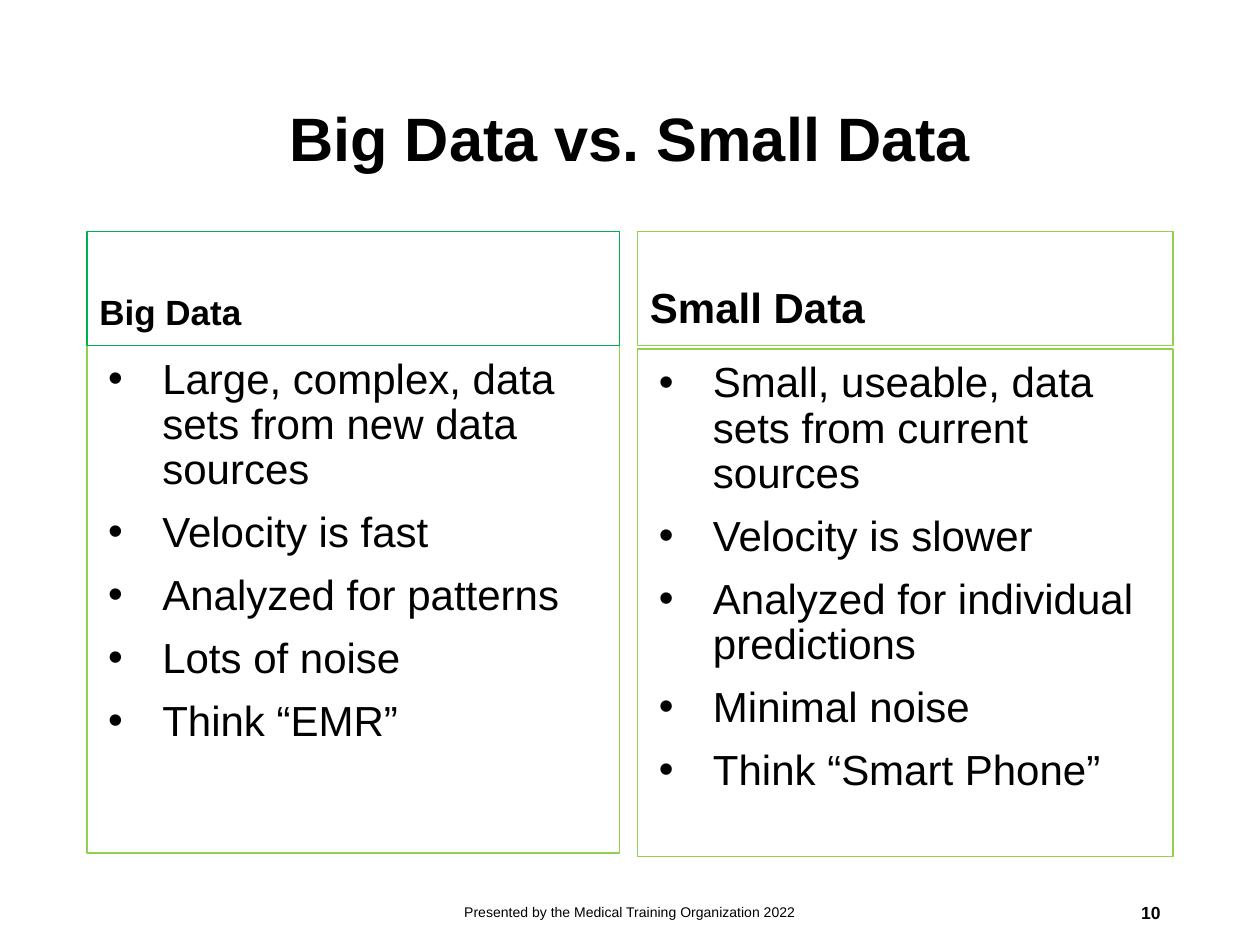
from lxml import etree
from pptx import Presentation
from pptx.dml.color import RGBColor
from pptx.enum.shapes import MSO_SHAPE
from pptx.enum.text import MSO_ANCHOR as ANCHOR, MSO_AUTO_SIZE as FIT, PP_ALIGN as ALIGN
from pptx.oxml.ns import qn
from pptx.util import Inches, Pt

INK = "000000"
COLUMNS = [
    dict(heading="Big Data", size=20, line="00B050", left=0.69, width=4.23, body_top=2.74,
         points=["Large, complex, data sets from new data sources", "Velocity is fast",
                 "Analyzed for patterns", "Lots of noise", "Think “EMR”"]),
    dict(heading="Small Data", size=24, line="92D050", left=5.06, width=4.25, body_top=2.77,
         points=["Small, useable, data sets from current sources", "Velocity is slower",
                 "Analyzed for individual predictions", "Minimal noise",
                 "Think “Smart Phone”"]),
]


def rgb(value):
    """Return the colour for a hex string."""
    return RGBColor.from_string(value)


def set_all(target, values):
    """Set attributes of an object from a dict."""
    for name, value in values.items():
        setattr(target, name, value)


def add_bullet(p):
    """Give a paragraph a hanging round bullet."""
    pPr = p._p.get_or_add_pPr()
    indents = {"marL": Inches(0.5), "indent": Inches(-0.43)}
    for name, value in indents.items():
        pPr.set(name, str(int(value)))
    etree.SubElement(pPr, qn("a:buFont")).set("typeface", "Arial")
    etree.SubElement(pPr, qn("a:buChar")).set("char", "•")


def write(s, lines, size, bold=False, align=ALIGN.LEFT, anchor=ANCHOR.MIDDLE,
          spacing=0.9, bullets=False, inset=0.1):
    """Fill a shape with formatted paragraphs."""
    tf = s.text_frame
    set_all(tf, dict(word_wrap=True, auto_size=FIT.NONE, vertical_anchor=anchor,
                     margin_left=Inches(0.1), margin_right=Inches(0.1),
                     margin_top=Inches(inset), margin_bottom=Inches(inset)))
    for i, line in enumerate(lines):
        p = tf.paragraphs[0] if i == 0 else tf.add_paragraph()
        set_all(p, dict(alignment=align, line_spacing=spacing,
                        space_before=Pt(10 if i else 0)))
        if bullets:
            add_bullet(p)
        r = p.add_run()
        r.text = line
        set_all(r.font, dict(name="Arial", size=Pt(size), bold=bold))
        r.font.color.rgb = rgb(INK)


def add_panel(slide, box, line):
    """Add an unfilled rectangle with a thin border."""
    s = slide.shapes.add_shape(MSO_SHAPE.RECTANGLE, *map(Inches, box))
    s.shadow.inherit = False
    s.fill.background()
    s.line.color.rgb = rgb(line)
    s.line.width = Pt(0.75)
    return s


def add_title(slide, box, text):
    """Place and format the title placeholder."""
    s = slide.shapes.title
    set_all(s, dict(zip(("left", "top", "width", "height"), map(Inches, box))))
    write(s, [text], 35, bold=True, align=ALIGN.CENTER)


def add_column(slide, top, heading, size, line, left, width, body_top, points):
    """Add a heading panel with a bulleted panel below it."""
    body = add_panel(slide, (left, body_top, width, 4.03), "92D050")
    write(body, points, 24, anchor=ANCHOR.TOP, bullets=True)
    head = add_panel(slide, (left, top, width, 0.9), line)
    write(head, [heading], size, bold=True, anchor=ANCHOR.BOTTOM)


def add_footer(slide, top):
    """Add the presenter line and the slide number."""
    credit = slide.shapes.add_textbox(*map(Inches, (3.31, top, 3.38, 0.4)))
    write(credit, ["Presented by the Medical Training Organization 2022"], 8,
          align=ALIGN.CENTER, spacing=1.0)
    number = slide.shapes.add_textbox(*map(Inches, (7.06, top, 2.25, 0.4)))
    write(number, ["10"], 10, bold=True, align=ALIGN.RIGHT, spacing=1.0, inset=0.05)


def main():
    """Build and save the slide."""
    prs = Presentation()
    set_all(prs, dict(slide_width=Inches(10), slide_height=Inches(7.5)))
    slide = prs.slides.add_slide(prs.slide_layouts[5])
    add_title(slide, (0.69, 0.4, 8.62, 1.45), "Big Data vs. Small Data")
    for column in COLUMNS:
        add_column(slide, 1.84, **column)
    add_footer(slide, 7.04)
    prs.save("out.pptx")


if __name__ == "__main__":
    main()
